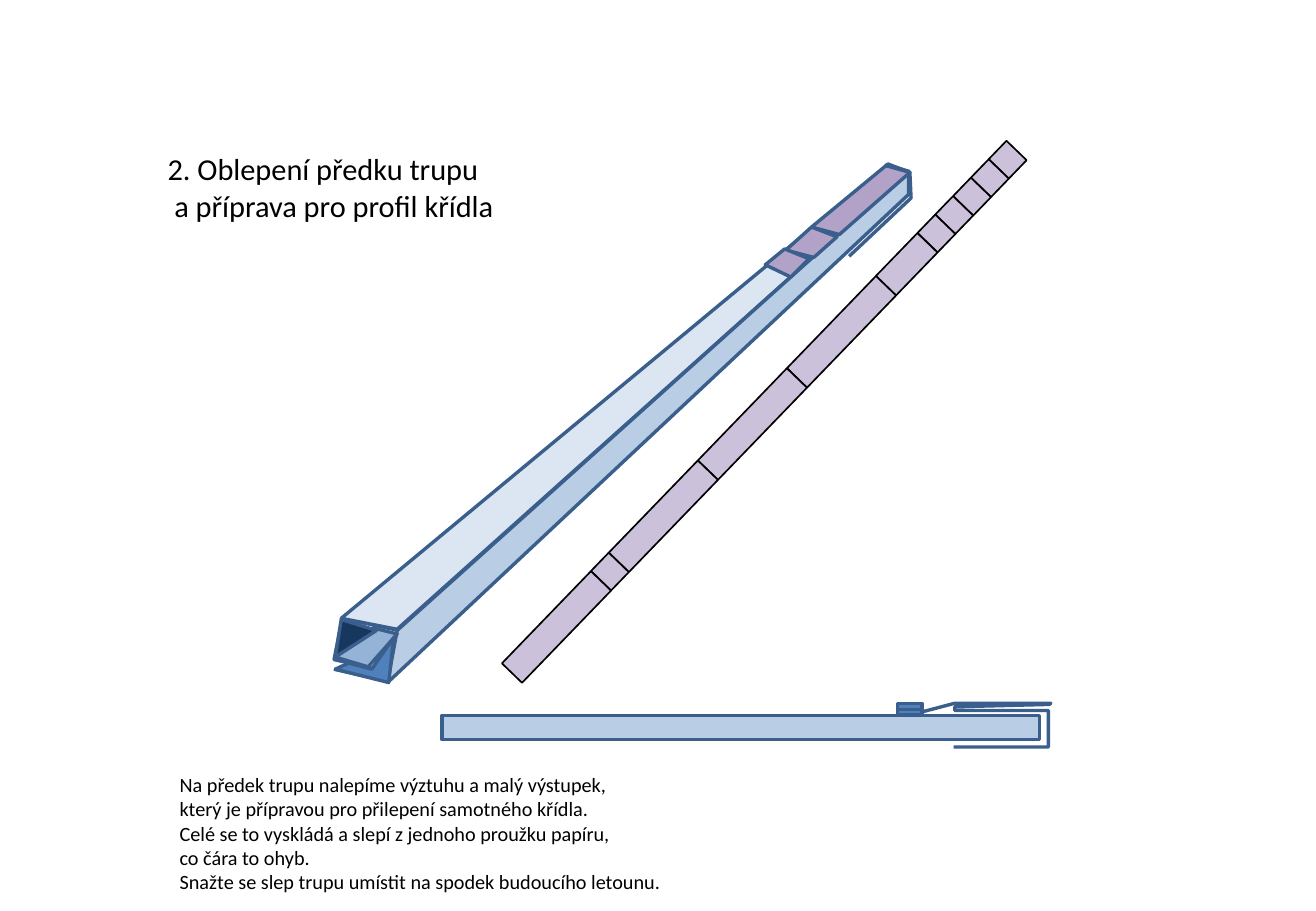
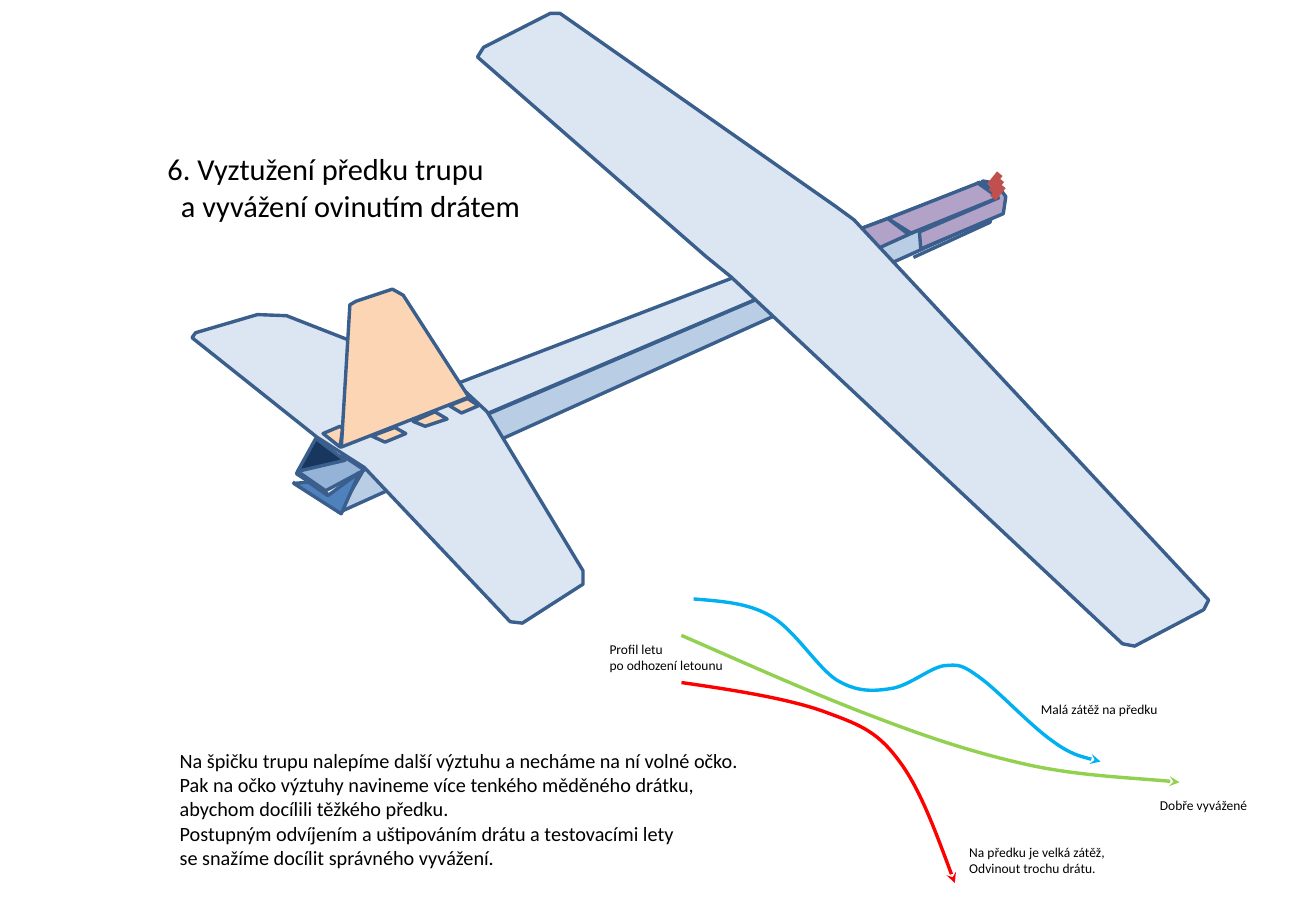
from dataclasses import dataclass
from math import cos, radians, sin
from typing import Any

from lxml.etree import SubElement
from pptx import Presentation
from pptx.dml.color import RGBColor
from pptx.enum.shapes import MSO_CONNECTOR as Connector, MSO_SHAPE as Preset
from pptx.enum.text import MSO_ANCHOR as Anchor, MSO_AUTO_SIZE as AutoSize
from pptx.oxml.ns import qn
from pptx.util import Pt

COLORS = {
    "ink": "000000", "edge": "3A5F8C", "top": "DCE6F2", "side": "B9CDE5",
    "inner": "95B3D7", "shade": "17375E", "flap": "4F81BD", "strip": "CCC1DA",
    "nose": "B3A2C7", "fin": "FCD5B5", "wire": "C0504D",
    "light": "00B0F0", "heavy": "FF0000", "balanced": "92D050",
}
FRAME_FORMAT = {"word_wrap": False, "auto_size": AutoSize.SHAPE_TO_FIT_TEXT,
                "vertical_anchor": Anchor.TOP}
TITLE_SIZE, BODY_SIZE, LABEL_SIZE = 18, 12, 8
LINE_HEIGHT, INSETS = 1.22, 7.2
EDGE_WIDTH = 2

Points = list[tuple[float, float]]


@dataclass(frozen=True)
class Panel:
    """A straight-sided outline; without a fill it stays open."""
    points: Points
    fill: str | None = None


@dataclass(frozen=True)
class Flight:
    """A flight path: a start, then two handles and an end per curve."""
    color: str
    points: Points


@dataclass(frozen=True)
class Note:
    left: float
    top: float
    width: float
    size: int
    lines: list[str]
    second_indent: float = 0


FUSELAGE = [
    Panel([(198, 396.7), (230.4, 403.9), (236.2, 373.7), (203, 366.5),
           (198, 391), (220.3, 396)]),
    Panel([(202.3, 366.5), (526.3, 97.9), (538.6, 101.5), (235.4, 373)], "top"),
    Panel([(235.4, 373.7), (538.6, 101.5), (538.6, 115.2), (229.7, 404.6)], "side"),
    Panel([(198.7, 389.5), (221, 372.2), (235.4, 375.8), (218.2, 395.3)], "inner"),
    Panel([(198.7, 389.5), (223.2, 373.7), (202.3, 367.2)], "shade"),
    Panel([(198.7, 396.7), (206.6, 393.1), (220.3, 396.7), (233.3, 378),
           (230.4, 404.6)], "flap"),
]
NOSE_COVER = [
    Panel([(526.3, 97.2), (539.3, 102.2), (497.5, 139), (481, 134.6)], "nose"),
    Panel([(481, 134.6), (496.1, 140.4), (482.4, 152.6), (465.8, 148.3)], "nose"),
    Panel([(468.7, 164.2), (479.5, 153.4), (465.1, 147.6), (453.6, 157)], "nose"),
    Panel([(503.3, 151.9), (540, 117.4), (539.3, 102.2), (524.2, 97.9)]),
]
FOLDED_STRIP = Panel([
    (565.2, 442.8), (621.4, 442.8), (621.4, 421.2), (565.9, 421.2), (565.9, 419),
    (622.1, 417.6), (622.8, 416.9), (565.9, 416.9), (544.3, 422.6)])

STRIP_START, STRIP_ANGLE, STRIP_WIDTH = (602.5, 89.2), 134, 16.6
STRIP_LENGTHS = [15.2] * 5 + [35.4] + [76] * 3 + [15.2, 76]

GLIDER = [
    Panel([(173.5, 285.8), (201.6, 303.8), (217.4, 277.2), (188.6, 259.2),
           (175.7, 280.8), (194.4, 293)]),
    Panel([(187.9, 259.2), (580.3, 108.7), (591.1, 116.6), (216.7, 275.8)], "top"),
    Panel([(216.7, 276.5), (591.1, 116.6), (586.8, 129.6), (200.9, 303.8)], "side"),
    Panel([(176.4, 279.4), (203, 270), (216, 278.6), (193, 290.9)], "inner"),
    Panel([(176.4, 279.4), (204.5, 272.9), (187.2, 259.9)], "shade"),
    Panel([(174.2, 286.6), (182.9, 285.8), (194.4, 293.8), (213.1, 280.1),
           (202.3, 304.6)], "flap"),
    Panel([(581, 108), (591.1, 117.4), (540, 138.2), (526.3, 129.6)], "nose"),
    Panel([(526.3, 129.6), (538.6, 139), (521.3, 146.9), (506.9, 136.8)], "nose"),
    Panel([(506.9, 136.8), (520.6, 147.6), (508.3, 151.9), (494.6, 141.8)], "nose"),
    Panel([(491.8, 157.7), (505.4, 150.5), (493.9, 140.4), (480.2, 145.4)], "nose"),
    Panel([(480.2, 146.9), (491, 158.4), (480.2, 163.4), (472.3, 151.9)], "nose"),
    Panel([(541.4, 152.6), (586.8, 131.8), (591.1, 116.6), (578.9, 108)]),
    # Wing and tailplane
    Panel([(418.3, 151.9), (433.4, 164.2), (665.3, 381.6), (672.5, 383),
           (713.5, 361.4), (716.4, 355.7), (506.2, 130.3), (495.4, 122.4),
           (331.9, 7.9), (326.2, 7.9), (286.6, 28.1), (283, 33.8)], "top"),
    Panel([(113.8, 200.2), (187.9, 259.2), (216, 277.2), (302.4, 368.6),
           (309.6, 369.4), (345.6, 346.3), (345.6, 338.4), (288.7, 244.1),
           (269.3, 226.1), (169.9, 187.2), (152.6, 186.5), (115.9, 197.3)], "top"),
    # Fin and its glued tabs
    Panel([(202.3, 265), (207.4, 180.7), (211, 178.6), (232.6, 171.4),
           (239, 175), (277.9, 235.4)], "fin"),
    Panel([(201.6, 265), (191.5, 257), (201.6, 252.7), (203, 254.2)], "fin"),
    Panel([(266.4, 240.5), (273.6, 244.8), (283.7, 240.5), (277.2, 236.2)], "fin"),
    Panel([(220.3, 258.5), (228.2, 262.1), (240.5, 257), (234, 253.4)], "fin"),
    Panel([(257.8, 244.1), (265, 248.4), (252, 252.7), (244.8, 249.8)], "fin"),
    Panel([(545, 137.5), (545.8, 147.6), (594.7, 126.7), (596.2, 116.6),
           (590.4, 108.7), (582.5, 107.3), (591.8, 117.4)], "nose"),
]
FLIGHTS = [
    Flight("light", [
        (411.1, 355), (427, 356.4), (442.8, 357.1), (456.5, 365),
        (470.9, 373), (484.6, 396), (496.1, 403.2),
        (508.3, 410.4), (517.7, 409.7), (527.8, 408.2),
        (538.6, 406.8), (550.8, 396), (559.4, 394.6),
        (568.1, 393.8), (570.2, 393.8), (581, 401.8),
        (591.1, 409), (610.6, 429.8), (622.8, 438.5),
        (634.3, 447.1), (643.7, 449.3), (652.3, 451.4)]),
    Flight("heavy", [
        (403.9, 404.6), (434.9, 409), (465.8, 414), (486.7, 421.2),
        (508.3, 429.1), (519.1, 432.7), (532.1, 450),
        (545, 466.6), (555.1, 494.6), (565.9, 523.4)]),
    Flight("balanced", [
        (403.9, 376.6), (445, 394.6), (485.3, 412.6), (519.8, 425.5),
        (553.7, 438.5), (581, 447.1), (610.6, 453.6),
        (640.8, 460.1), (681.1, 461.5), (699.1, 463.7)]),
]
NOSE_NOTES = [
    Note(92.2, 85.7, 210.2, TITLE_SIZE,
         ["2. Oblepení předku trupu", "a příprava pro profil křídla"], 4),
    Note(99.4, 454.3, 302.4, BODY_SIZE, [
        "Na předek trupu nalepíme výztuhu a malý výstupek,",
        "který je přípravou pro přilepení samotného křídla.",
        "Celé se to vyskládá a slepí z jednoho proužku papíru,",
        "co čára to ohyb.",
        "Snažte se slep trupu umístit na spodek budoucího letounu."]),
]
BALANCE_NOTES = [
    Note(92.2, 85.7, 226.1, TITLE_SIZE,
         ["6. Vyztužení předku trupu", "a vyvážení ovinutím drátem"], 8),
    Note(609.8, 411.8, 85, LABEL_SIZE, ["Malá zátěž na předku"]),
    Note(567.4, 496.8, 95.8, LABEL_SIZE,
         ["Na předku je velká zátěž,", "Odvinout trochu drátu."]),
    Note(680.4, 468.7, 67, LABEL_SIZE, ["Dobře vyvážené"]),
    Note(354.2, 376.6, 82.8, LABEL_SIZE, ["Profil letu", "po odhození letounu"]),
    Note(99.4, 439.9, 349.2, BODY_SIZE, [
        "Na špičku trupu nalepíme další výztuhu a necháme na ní volné očko.",
        "Pak na očko výztuhy navineme více tenkého měděného drátku,",
        "abychom docílili těžkého předku.",
        "Postupným odvíjením a uštipováním drátu a testovacími lety",
        "se snažíme docílit správného vyvážení."]),
]


def rgb(color: str) -> RGBColor:
    return RGBColor.from_string(COLORS[color])


def set_all(target: Any, values: dict[str, Any]) -> None:
    for name, value in values.items():
        setattr(target, name, value)


def paint(shape: Any, fill: str | None, line: str = "edge",
          width: float = EDGE_WIDTH) -> None:
    shape.shadow.inherit = False
    if fill:
        shape.fill.solid()
        shape.fill.fore_color.rgb = rgb(fill)
    else:
        shape.fill.background()
    shape.line.color.rgb = rgb(line)
    shape.line.width = Pt(width)


def add_outline(shapes: Any, points: Points, close: bool) -> Any:
    start, *rest = [(Pt(x), Pt(y)) for x, y in points]
    builder = shapes.build_freeform(*start)
    builder.add_line_segments(rest, close=close)
    return builder.convert_to_shape()


def add_panel(shapes: Any, panel: Panel) -> None:
    outline = add_outline(shapes, panel.points, close=panel.fill is not None)
    paint(outline, panel.fill)


def add_flight(shapes: Any, flight: Flight) -> None:
    """Draw the route, joining each three segments into one Bézier curve."""
    route = add_outline(shapes, flight.points, close=False)
    paint(route, None, flight.color)
    segments = list(route._element.iter(qn("a:lnTo")))
    for first in range(0, len(segments), 3):
        curve = SubElement(segments[first].getparent(), qn("a:cubicBezTo"))
        for segment in segments[first:first + 3]:
            curve.append(segment[0])
            segment.getparent().remove(segment)
    SubElement(route.line._get_or_add_ln(), qn("a:tailEnd"), type="stealth")


def add_box(shapes: Any, left: float, top: float, width: float, height: float,
            fill: str) -> Any:
    box = shapes.add_shape(Preset.RECTANGLE, Pt(left), Pt(top), Pt(width), Pt(height))
    paint(box, fill)
    return box


def add_paper_strip(shapes: Any) -> None:
    """Lay the folded fields end to end along the slanted strip."""
    along_x, along_y = cos(radians(STRIP_ANGLE)), sin(radians(STRIP_ANGLE))
    x, y = STRIP_START
    for length in STRIP_LENGTHS:
        center_x, center_y = x + along_x * length / 2, y + along_y * length / 2
        field = add_box(shapes, center_x - length / 2, center_y - STRIP_WIDTH / 2,
                        length, STRIP_WIDTH, "strip")
        paint(field, "strip", "ink", 1)
        field.rotation = STRIP_ANGLE
        x, y = x + along_x * length, y + along_y * length


def add_wire_turn(shapes: Any, x: float, y: float) -> None:
    turn = shapes.add_connector(Connector.STRAIGHT, Pt(x), Pt(y), Pt(x + 5.8), Pt(y - 7.2))
    turn.line.color.rgb = rgb("wire")
    turn.line.width = Pt(4.25)
    SubElement(turn._element.spPr, qn("a:effectLst"))


def add_note(shapes: Any, note: Note) -> None:
    height = note.size * LINE_HEIGHT * len(note.lines) + INSETS
    box = shapes.add_textbox(Pt(note.left), Pt(note.top), Pt(note.width), Pt(height))
    frame = box.text_frame
    set_all(frame, FRAME_FORMAT)
    frame.text = "\n".join(note.lines)
    for paragraph in frame.paragraphs:
        set_all(paragraph.font, {"name": "Calibri", "size": Pt(note.size)})
        paragraph.font.color.rgb = rgb("ink")
    if note.second_indent:
        properties = frame.paragraphs[1]._p.get_or_add_pPr()
        properties.set("marL", str(Pt(note.second_indent)))


def draw_nose_slide(shapes: Any) -> None:
    drawing = shapes.add_group_shape().shapes
    for panel in FUSELAGE:
        add_panel(drawing, panel)
    add_paper_strip(drawing)
    add_box(drawing, 262.1, 424.1, 354.2, 14.4, "side")
    for panel in [FOLDED_STRIP, *NOSE_COVER]:
        add_panel(drawing, panel)
    for top in (419.8, 416.9):
        add_box(drawing, 532.1, top, 14.4, 3.6, "flap")
    for note in NOSE_NOTES:
        add_note(shapes, note)


def draw_balance_slide(shapes: Any) -> None:
    drawing = shapes.add_group_shape().shapes
    for panel in GLIDER:
        add_panel(drawing, panel)
    for turn in range(3):
        add_wire_turn(drawing, 586.8 + 0.9 * turn, 110.2 + 3.6 * turn)
    for flight in FLIGHTS:
        add_flight(shapes, flight)
    for note in BALANCE_NOTES:
        add_note(shapes, note)


def main() -> None:
    deck = Presentation()
    set_all(deck, {"slide_width": Pt(780), "slide_height": Pt(540)})
    for draw in (draw_nose_slide, draw_balance_slide):
        draw(deck.slides.add_slide(deck.slide_layouts[6]).shapes)
    deck.save("out.pptx")


if __name__ == "__main__":
    main()
